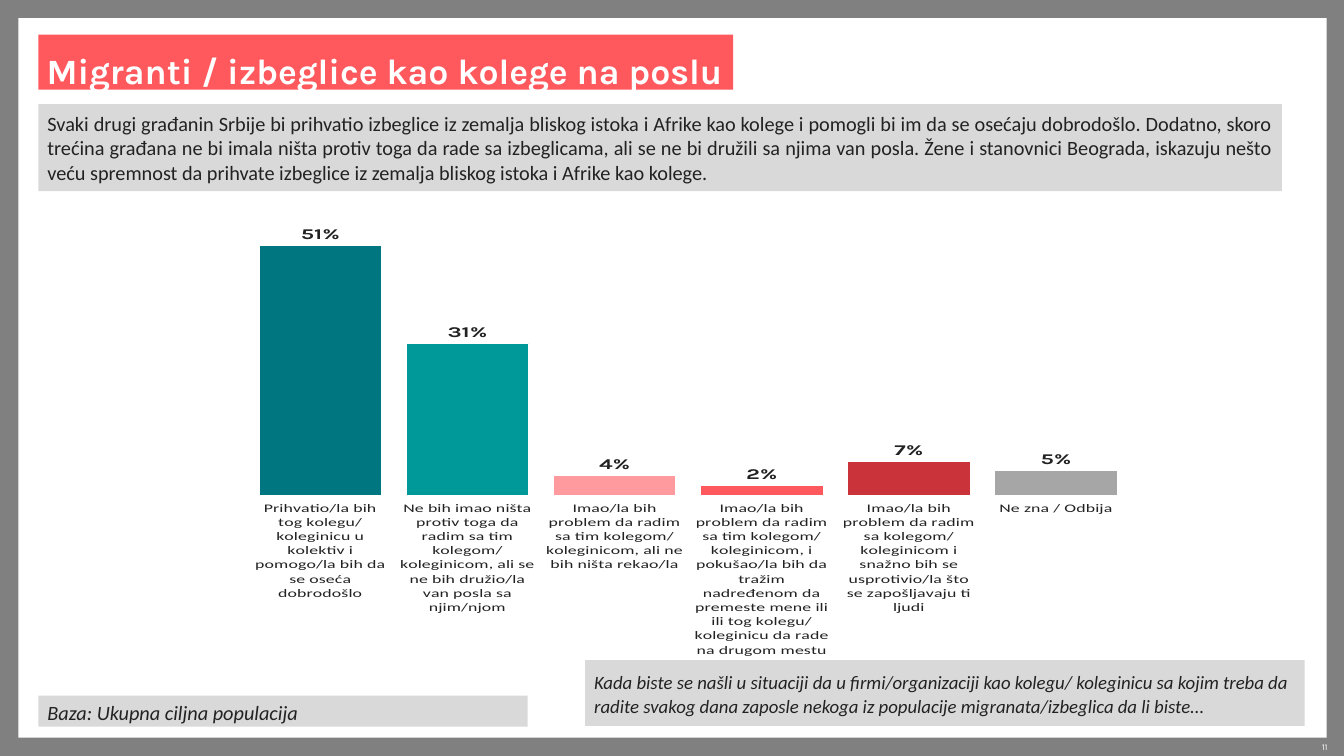
from dataclasses import dataclass

from lxml.etree import SubElement
from pptx import Presentation
from pptx.chart.data import CategoryChartData
from pptx.dml.color import RGBColor
from pptx.enum.chart import XL_CHART_TYPE as ChartType, XL_LABEL_POSITION as LabelPosition
from pptx.enum.chart import XL_TICK_MARK as TickMark
from pptx.enum.shapes import MSO_SHAPE as Shape
from pptx.enum.text import MSO_ANCHOR as Anchor, PP_ALIGN as Align
from pptx.oxml import parse_xml
from pptx.oxml.ns import nsdecls, qn
from pptx.slide import Slide
from pptx.util import Emu, Pt

EMU_PER_PX = 9144
COLORS = {
    "frame": "808080",
    "white": "FFFFFF",
    "coral": "FF585D",
    "panel": "D9D9D9",
    "ink": "222223",
    "dark_teal": "007681",
    "teal": "009999",
    "pink": "FF9B9E",
    "red": "CB333B",
    "gray": "A6A6A6",
}


@dataclass(frozen=True)
class Box:
    left: int
    top: int
    width: int
    height: int

    def emu(self) -> tuple[Emu, ...]:
        return tuple(px(side) for side in (self.left, self.top, self.width, self.height))


@dataclass(frozen=True)
class Panel:
    box: Box
    text: str = ""
    size: float = 16
    fill: str | None = "panel"
    color: str = "ink"
    font: str = "Calibri"
    bold: bool = False
    italic: bool = False
    align: Align = Align.LEFT
    line_spacing: float | Pt = 1.0
    gap: int = 0
    insets: tuple[int, int, int, int] = (10, 0, 10, 0)
    wrap: bool = True


@dataclass(frozen=True)
class Answer:
    label: str
    percent: int
    color: str


PANELS = [
    Panel(Box(20, 20, 1431, 787), fill="white"),
    Panel(Box(1373, 810, 79, 13), "11", size=7, fill=None, color="white", font="Karla",
          align=Align.RIGHT, line_spacing=1.1, insets=(0, 0, 0, 0)),
    Panel(Box(42, 38, 760, 60), "Migranti / izbeglice kao kolege na poslu", size=28,
          fill="coral", color="white", font="Karla", bold=True, line_spacing=Pt(41),
          insets=(9, 8, 9, 0), wrap=False),
    Panel(Box(42, 761, 535, 34), "Baza: Ukupna ciljna populacija",
          italic=True, line_spacing=1.1, gap=6),
    Panel(Box(640, 722, 787, 72),
          "Kada biste se našli u situaciji da u firmi/organizaciji kao kolegu/ koleginicu "
          "sa kojim treba da radite svakog dana zaposle nekoga iz populacije "
          "migranata/izbeglica da li biste...",
          size=14.8, italic=True, line_spacing=1.1, gap=6),
    Panel(Box(42, 114, 1360, 95),
          "Svaki drugi građanin Srbije bi prihvatio izbeglice iz zemalja bliskog istoka i "
          "Afrike kao kolege i pomogli bi im da se osećaju dobrodošlo. Dodatno, skoro "
          "trećina građana ne bi imala ništa protiv toga da rade sa izbeglicama, ali se ne "
          "bi družili sa njima van posla. Žene i stanovnici Beograda, iskazuju nešto veću "
          "spremnost da prihvate izbeglice iz zemalja bliskog istoka i Afrike kao kolege.",
          align=Align.JUSTIFY),
]

ANSWERS = [
    Answer("Prihvatio/la bih tog kolegu/koleginicu u kolektiv i pomogo/la bih da se oseća "
           "dobrodošlo", 51, "dark_teal"),
    Answer("Ne bih imao ništa protiv toga da radim sa tim kolegom/koleginicom, ali se ne "
           "bih družio/la van posla sa njim/njom", 31, "teal"),
    Answer("Imao/la bih problem da radim sa tim kolegom/koleginicom, ali ne bih ništa "
           "rekao/la", 4, "pink"),
    Answer("Imao/la bih problem da radim sa tim kolegom/koleginicom, i pokušao/la bih da "
           "tražim nadređenom da premeste mene ili ili tog kolegu/koleginicu da rade na "
           "drugom mestu", 2, "coral"),
    Answer("Imao/la bih problem da radim sa kolegom/koleginicom i snažno bih se "
           "usprotivio/la što se zapošljavaju ti ljudi", 7, "red"),
    Answer("Ne zna / Odbija", 5, "gray"),
]
CHART_BOX = Box(66, 217, 1360, 502)
PLOT_LAYOUT = {"x": 0.15, "y": 0.01, "w": 0.71, "h": 0.99}


def px(length: int) -> Emu:
    return Emu(length * EMU_PER_PX)


def rgb(name: str) -> RGBColor:
    return RGBColor.from_string(COLORS[name])


def style_font(font, name: str, size: float, color: str, bold: bool = False,
               italic: bool = False) -> None:
    font.name = name
    font.size = Pt(size)
    font.bold = bold
    font.italic = italic
    font.color.rgb = rgb(color)


def draw_panel(slide: Slide, panel: Panel) -> None:
    if panel.fill:
        area = slide.shapes.add_shape(Shape.RECTANGLE, *panel.box.emu())
        area.shadow.inherit = False
        area.fill.solid()
        area.fill.fore_color.rgb = rgb(panel.fill)
        area.line.fill.background()
    else:
        area = slide.shapes.add_textbox(*panel.box.emu())
    if not panel.text:
        return
    frame = area.text_frame
    frame.word_wrap = panel.wrap
    frame.vertical_anchor = Anchor.MIDDLE if panel.fill else Anchor.TOP
    (frame.margin_left, frame.margin_top,
     frame.margin_right, frame.margin_bottom) = map(px, panel.insets)
    paragraph = frame.paragraphs[0]
    paragraph.text = panel.text
    paragraph.alignment = panel.align
    paragraph.line_spacing = panel.line_spacing
    paragraph.space_before = paragraph.space_after = Pt(panel.gap)
    style_font(paragraph.font, panel.font, panel.size, panel.color, panel.bold, panel.italic)


def place_plot(chart) -> None:
    plot_area = chart.element.xpath("c:chart/c:plotArea")[0]
    for old_layout in plot_area.xpath("c:layout"):
        plot_area.remove(old_layout)
    layout = parse_xml(f"<c:layout {nsdecls('c')}><c:manualLayout/></c:layout>")
    settings = {"layoutTarget": "inner", "xMode": "edge", "yMode": "edge", **PLOT_LAYOUT}
    for tag, value in settings.items():
        SubElement(layout[0], qn(f"c:{tag}")).set("val", str(value))
    plot_area.insert(0, layout)


def draw_answers(slide: Slide, answers: list[Answer]) -> None:
    data = CategoryChartData()
    data.categories = [answer.label for answer in answers]
    data.add_series("Series 1", [answer.percent for answer in answers])
    chart = slide.shapes.add_chart(ChartType.COLUMN_CLUSTERED, *CHART_BOX.emu(), data).chart
    chart.has_title = False
    chart.has_legend = False
    style_font(chart.font, "Karla", 18, "ink")
    place_plot(chart)

    percent_axis = chart.value_axis
    percent_axis.minimum_scale = 0
    percent_axis.maximum_scale = 60
    percent_axis.has_major_gridlines = False
    percent_axis.visible = False

    answer_axis = chart.category_axis
    answer_axis.major_tick_mark = TickMark.OUTSIDE
    answer_axis.format.line.fill.background()
    style_font(answer_axis.tick_labels.font, "Calibri", 14, "ink")
    chart.element.xpath(".//c:catAx/c:txPr/a:bodyPr")[0].set("rot", "-60000000")

    plot = chart.plots[0]
    plot.gap_width = 20
    plot.vary_by_categories = False
    plot.has_data_labels = True
    labels = plot.data_labels
    labels.show_value = True
    labels.position = LabelPosition.OUTSIDE_END
    labels.number_format = '#"%"'
    labels.number_format_is_linked = False
    style_font(labels.font, "Karla", 18, "ink", bold=True)

    for index, answer in enumerate(answers):
        column = plot.series[0].points[index].format
        column.fill.solid()
        column.fill.fore_color.rgb = rgb(answer.color)
        column.line.color.rgb = rgb("white")
        column.line.width = Pt(0.75)


def main() -> None:
    deck = Presentation()
    deck.slide_width, deck.slide_height = px(1470), px(827)
    slide = deck.slides.add_slide(deck.slide_layouts[6])
    slide.background.fill.solid()
    slide.background.fill.fore_color.rgb = rgb("frame")
    for panel in PANELS:
        draw_panel(slide, panel)
    draw_answers(slide, ANSWERS)
    deck.save("out.pptx")


if __name__ == "__main__":
    main()
